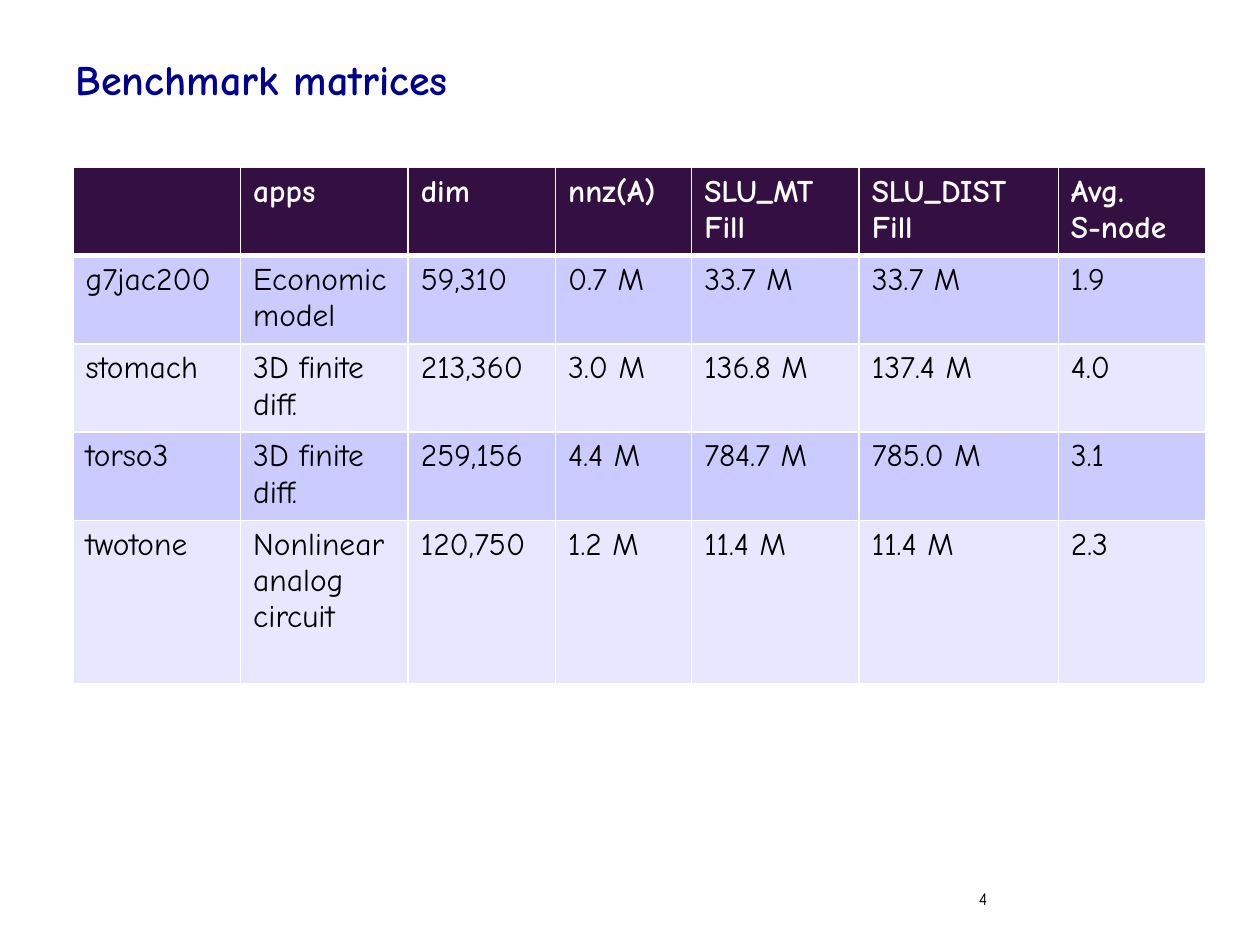
"""Build the benchmark matrices slide with its table of solver statistics."""
from lxml import etree
from pptx import Presentation
from pptx.dml.color import RGBColor
from pptx.enum.text import MSO_ANCHOR, PP_ALIGN
from pptx.oxml.ns import qn
from pptx.util import Inches, Pt

LEFT = PP_ALIGN.LEFT
MIDDLE = MSO_ANCHOR.MIDDLE
FONT = "Comic Neue"
WHITE = "FFFFFF"


def style_text(text_frame, size, color, bold=False):
    for paragraph in text_frame.paragraphs:
        paragraph.alignment = LEFT
        paragraph.font.name = FONT
        paragraph.font.size = Pt(size)
        paragraph.font.bold = bold
        paragraph.font.color.rgb = RGBColor.from_string(color)


def add_border(cell, side, width):
    line = etree.SubElement(cell._tc.get_or_add_tcPr(), qn(f"a:{side}"), w=str(Pt(width)))
    fill = etree.SubElement(line, qn("a:solidFill"))
    etree.SubElement(fill, qn("a:srgbClr"), val=WHITE)


prs = Presentation()
prs.slide_width, prs.slide_height = Inches(10), Inches(7.5)
slide = prs.slides.add_slide(prs.slide_layouts[5])

title = slide.shapes.title
title.left, title.top = Inches(0.5), Inches(0.25)
title.width, title.height = Inches(8.17), Inches(0.75)
title.text_frame.text = "Benchmark matrices"
title.text_frame.vertical_anchor = MIDDLE
style_text(title.text_frame, 24, "000090", bold=True)

matrices = [
    ["", "apps", "dim", "nnz(A)", "SLU_MT\nFill", "SLU_DIST\nFill", "Avg.\nS-node"],
    ["g7jac200", "Economic\nmodel", "59,310", "0.7 M", "33.7 M", "33.7 M", "1.9"],
    ["stomach", "3D finite diff.", "213,360", "3.0 M", "136.8 M", "137.4 M", "4.0"],
    ["torso3", "3D finite diff.", "259,156", "4.4 M", "784.7 M", "785.0 M", "3.1"],
    ["twotone", "Nonlinear analog circuit", "120,750", "1.2 M", "11.4 M", "11.4 M", "2.3"],
]
column_widths = [1.33, 1.33, 1.17, 1.08, 1.33, 1.58, 1.17]
row_heights = [0.7, 0.7, 0.7, 0.7, 1.3]
row_fills = ["330F42", "CBCBFF", "E7E7FF", "CBCBFF", "E7E7FF"]

benchmarks = slide.shapes.add_table(
    len(matrices), len(column_widths), Inches(0.58), Inches(1.33), Inches(9), Inches(4.1)
).table
for column, width in zip(benchmarks.columns, column_widths):
    column.width = Inches(width)
for r, (values, height, row_fill) in enumerate(zip(matrices, row_heights, row_fills)):
    benchmarks.rows[r].height = Inches(height)
    is_header = r == 0
    for c, value in enumerate(values):
        cell = benchmarks.cell(r, c)
        cell.text = value
        style_text(cell.text_frame, 18, WHITE if is_header else "000000", bold=is_header)
        add_border(cell, "lnL", 1)
        add_border(cell, "lnR", 1)
        add_border(cell, "lnT", 3 if r == 1 else 1)
        add_border(cell, "lnB", 3 if is_header else 1)
        cell.fill.solid()
        cell.fill.fore_color.rgb = RGBColor.from_string(row_fill)

page_number = slide.shapes.add_textbox(Inches(7.67), Inches(7), Inches(2.08), Inches(0.5))
page_number.text_frame.word_wrap = True
page_number.text_frame.text = "4"
style_text(page_number.text_frame, 10, "000000")

prs.save("out.pptx")
